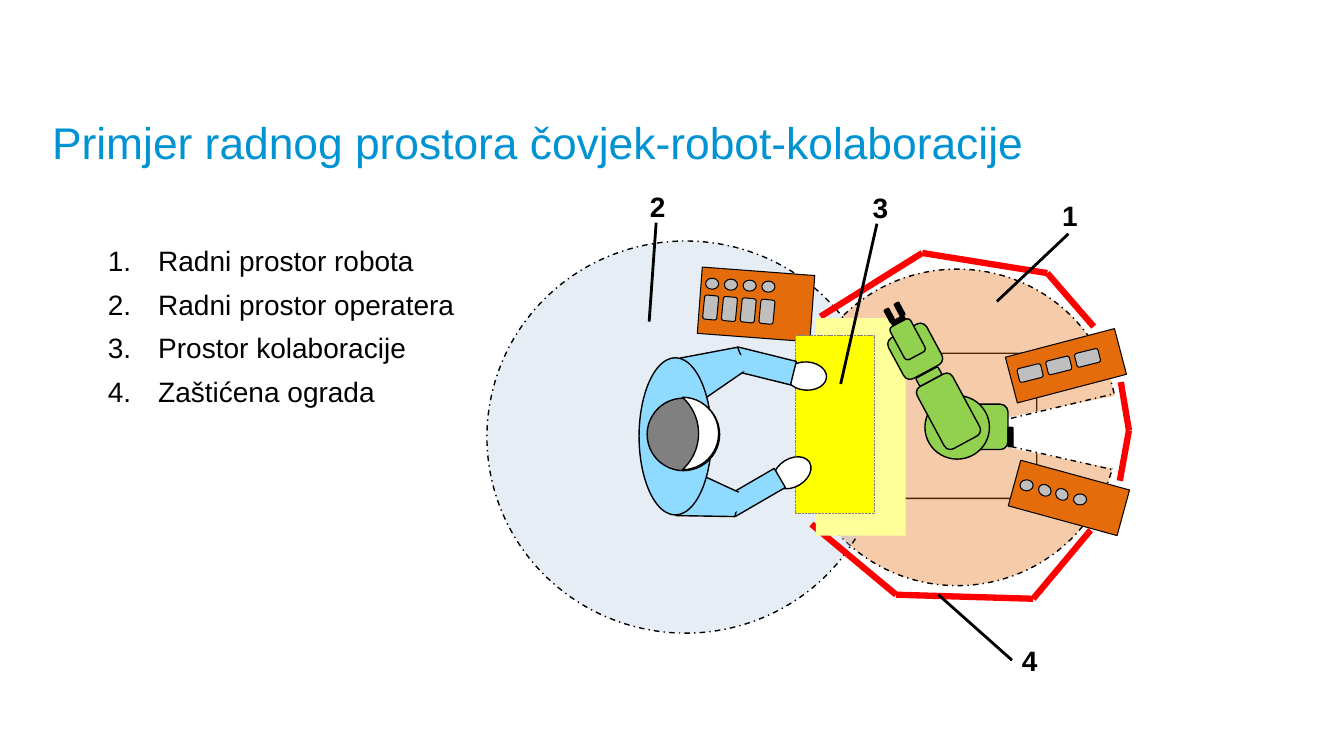
import itertools
from dataclasses import dataclass
from typing import Any, Optional

import lxml.etree
import pptx
import pptx.dml.color
import pptx.enum.dml
import pptx.enum.shapes
import pptx.enum.text
import pptx.oxml.ns
import pptx.util

Pt = pptx.util.Pt
Color = pptx.dml.color.RGBColor
Kind = pptx.enum.shapes.MSO_SHAPE
Dash = pptx.enum.dml.MSO_LINE
Text = pptx.enum.text
qn = pptx.oxml.ns.qn

BLACK = Color(0x00, 0x00, 0x00)
WHITE = Color(0xFF, 0xFF, 0xFF)
TITLE = Color(0x00, 0x93, 0xD3)
RED = Color(0xFF, 0x00, 0x00)
RUST = Color(0xE4, 0x6C, 0x0A)
PALE = Color(0xB9, 0xCD, 0xE5)
SILVER = Color(0xBF, 0xBF, 0xBF)
GRAY = Color(0x80, 0x80, 0x80)
CREAM = Color(0xFF, 0xFF, 0x99)
YELLOW = Color(0xFF, 0xFF, 0x00)
SKY = Color(0x8F, 0xDA, 0xFF)
GREEN = Color(0x92, 0xD0, 0x50)

RECT, ROUND, OVAL = Kind.RECTANGLE, Kind.ROUNDED_RECTANGLE, Kind.OVAL
DISC = Kind.FLOWCHART_CONNECTOR


@dataclass(frozen=True)
class Part:
    kind: Any
    box: tuple[float, float, float, float]
    fill: Color
    turn: float = 0
    edge: Optional[Color] = BLACK
    thick: float = 1
    dash: Any = None
    alpha: Optional[int] = None
    adjust: Optional[float] = None


@dataclass(frozen=True)
class Row:
    kind: Any
    start: tuple[float, float]
    size: tuple[float, float]
    step: tuple[float, float]
    count: int
    turn: float = 0


@dataclass(frozen=True)
class Label:
    text: str
    spot: tuple[float, float]
    tail: tuple[float, float]
    head: tuple[float, float]


KEY, DOT = (17.3, 10.1), (9.4, 7.9)

ZONES = [
    Part(ROUND, (617.8, 233.3, 103.7, 141.8), WHITE, 90, adjust=0.06),
    Part(OVAL, (568.8, 192.2, 229.7, 226.1), RUST, 180, dash=Dash.DASH_DOT, alpha=35),
    Part(Kind.ISOSCELES_TRIANGLE, (712.1, 241.9, 54, 133.9), WHITE, 270, WHITE, 2),
    Part(OVAL, (347.8, 172.1, 283.7, 280.1), PALE, 180, dash=Dash.DASH_DOT, alpha=35),
]
BORDERS = [
    [(722.2, 298.8), (794.9, 281.5)],
    [(722.2, 319), (794.9, 335.5)],
]
PANELS = [
    Part(RECT, (744.5, 221, 33.8, 80.6), RUST, 75.3, thick=0.75),
    Part(RECT, (746.6, 315.4, 33.8, 80.6), RUST, 105.3, thick=0.75),
    Part(RECT, (499.7, 193.7, 80.6, 47.5), RUST, 184.3, thick=0.75),
]
ROWS = [
    Row(ROUND, (727.2, 261.4), KEY, (20.5, -5.4), 3, 346),
    Row(OVAL, (728.6, 342.7), DOT, (38.2, 10.1), 2),
    Row(OVAL, (741.6, 346.3), DOT, (12.2, 2.9), 2, 34.4),
    Row(OVAL, (504, 198.7), DOT, (13.4, 0.7), 4),
    Row(ROUND, (499, 214.6), KEY, (13.4, 1), 4, 275.5),
]
FENCE = [
    [(586.1, 226.1), (658.8, 180.7), (748.1, 195.1), (781.2, 233.3)],
    [(579.6, 374.4), (640.1, 424.8), (738, 427.7), (779, 378.7)],
    [(800.6, 272.9), (806.4, 307.4), (799.9, 343.4)],
]
TABLES = [
    Part(RECT, (537.1, 272.9, 155.5, 64.1), CREAM, 90, None),
    Part(RECT, (532.8, 275, 126.7, 56.2), YELLOW, 90, GRAY, 0.25, Dash.SQUARE_DOT),
]
LABELS = [
    Label("1", (751.7, 138.2), (763.2, 167), (712.1, 215.3)),
    Label("2", (457.2, 131.8), (468.7, 159.1), (463.7, 229.7)),
    Label("3", (616.3, 132.5), (626.4, 159.8), (600.5, 274.3)),
    Label("4", (722.9, 455.8), (722.9, 471.6), (670.3, 424.8)),
]
WORKER = [
    Part(OVAL, (555.8, 323.3, 20.2, 28.8), WHITE, 58.8),
    Part(OVAL, (565.9, 254.2, 20.2, 28.8), WHITE, 93.4),
    Part(RECT, (537.1, 239.8, 17.3, 43.2), SKY, 103.9),
    Part(RECT, (531.4, 331.2, 15.8, 41), SKY, 59.9),
    Part(Kind.TRAPEZOID, (489.6, 335.5, 34.6, 41), SKY, 102.9),
    Part(Kind.TRAPEZOID, (493.9, 243.4, 34.6, 41), SKY, 67.4),
    Part(OVAL, (426.2, 285.8, 112.3, 51.8), SKY, 90),
    Part(DISC, (462.2, 284.4, 51.8, 51.8), GRAY, 90),
    Part(Kind.MOON, (487.4, 283.7, 25.9, 51.8), WHITE, 180, adjust=0.553),
    Part(RECT, (529.2, 249.8, 10.8, 21.6), SKY, 103.9, None),
    Part(RECT, (524.9, 345.6, 10.8, 21.6), SKY, 58.6, None),
]
ROBOT = [
    Part(ROUND, (640.8, 216, 3.6, 10.1), BLACK, 331.9),
    Part(ROUND, (667.4, 288.7, 52.6, 32.4), GREEN),
    Part(DISC, (661, 282.2, 45.4, 46.1), GREEN, 90),
    Part(ROUND, (652.3, 279.4, 50.4, 28.8), GREEN, 61.7),
    Part(ROUND, (637.2, 235.4, 33.1, 31), GREEN, 241.7),
    Part(ROUND, (660.2, 259.9, 6.5, 18), GREEN, 241.7),
    Part(ROUND, (635, 234, 26.6, 16.6), GREEN, 241.7),
    Part(ROUND, (640.1, 223.9, 2.9, 10.1), BLACK, 241.7),
    Part(ROUND, (720, 305.3, 3.6, 13.7), BLACK),
    Part(ROUND, (633.6, 220.3, 3.6, 10.1), BLACK, 331.9),
]
ITEMS = ["Radni prostor robota", "Radni prostor operatera", "Prostor kolaboracije", "Zaštićena ograda"]


def apply(item: Any, values: dict[str, Any]) -> None:
    for name, value in values.items():
        setattr(item, name, value)


def place(item: Any, box: tuple[float, float, float, float]) -> None:
    apply(item, dict(zip(("left", "top", "width", "height"), map(Pt, box))))


def write(para: Any, text: str, size: float, color: Color, bold: bool = False) -> None:
    run = para.add_run()
    run.text = text
    apply(run.font, {"name": "Arial", "size": Pt(size), "bold": bold})
    run.font.color.rgb = color


def draw(shapes: Any, part: Part) -> None:
    shape = shapes.add_shape(part.kind, *map(Pt, part.box))
    shape.rotation = part.turn
    shape.shadow.inherit = False
    shape.fill.solid()
    shape.fill.fore_color.rgb = part.fill
    if part.alpha is not None:
        tint = shape._element.spPr.find(".//" + qn("a:srgbClr"))
        lxml.etree.SubElement(tint, qn("a:alpha"), val=str(part.alpha * 1000))
    if part.adjust is not None:
        shape.adjustments[0] = part.adjust
    if part.edge is None:
        shape.line.fill.background()
    else:
        shape.line.color.rgb = part.edge
        apply(shape.line, {"width": Pt(part.thick), "dash_style": part.dash})


def trace(shapes: Any, points: list[tuple[float, float]], color: Color, thick: float, dash: Any = None) -> None:
    for tail, head in itertools.pairwise(points):
        line = shapes.add_connector(pptx.enum.shapes.MSO_CONNECTOR.STRAIGHT, *map(Pt, tail + head))
        line.line.color.rgb = color
        apply(line.line, {"width": Pt(thick), "dash_style": dash})
        lxml.etree.SubElement(line._element.spPr, qn("a:effectLst"))


def repeat(shapes: Any, row: Row) -> None:
    for i in range(row.count):
        spot = tuple(a + i * d for a, d in zip(row.start, row.step))
        draw(shapes, Part(row.kind, spot + row.size, SILVER, row.turn, thick=0.75))


def mark(shapes: Any, label: Label) -> None:
    box = shapes.add_textbox(*map(Pt, label.spot + (25.9, 31.7)))
    box.text_frame.word_wrap = False
    write(box.text_frame.paragraphs[0], label.text, 20, BLACK, True)
    trace(shapes, [label.tail, label.head], BLACK, 2)


def head(title: Any) -> None:
    place(title, (32.4, 74.9, 913, 67))
    apply(title.text_frame, {
        "auto_size": Text.MSO_AUTO_SIZE.NONE, "word_wrap": True,
        "vertical_anchor": Text.MSO_ANCHOR.TOP,
        "margin_left": Pt(4.8), "margin_top": Pt(7.2),
    })
    para = title.text_frame.paragraphs[0]
    para.alignment = Text.PP_ALIGN.LEFT
    write(para, "Primjer radnog prostora čovjek-robot-kolaboracije", 31.7, TITLE)


def fill(body: Any) -> None:
    place(body, (69.8, 170.6, 285.8, 122.4))
    frame = body.text_frame
    apply(frame, {"auto_size": Text.MSO_AUTO_SIZE.NONE, "word_wrap": True})
    for i, item in enumerate(ITEMS):
        para = frame.add_paragraph() if i else frame.paragraphs[0]
        props = para._p.get_or_add_pPr()
        props.set("marL", str(Pt(36)))
        props.set("indent", str(-Pt(36)))
        lxml.etree.SubElement(props, qn("a:buFont"), typeface="+mj-lt")
        lxml.etree.SubElement(props, qn("a:buAutoNum"), type="arabicPeriod")
        para.space_before = Pt(7 if i else 0)
        write(para, item, 20, BLACK)


def main() -> None:
    deck = pptx.Presentation()
    apply(deck, {"slide_width": Pt(960), "slide_height": Pt(540)})
    slide = deck.slides.add_slide(deck.slide_layouts[1])
    shapes = slide.shapes
    head(shapes.title)
    fill(slide.placeholders[1])
    for part in ZONES:
        draw(shapes, part)
    for points in BORDERS:
        trace(shapes, points, BLACK, 1, Dash.DASH_DOT)
    for part in PANELS:
        draw(shapes, part)
    for row in ROWS:
        repeat(shapes, row)
    for points in FENCE:
        trace(shapes, points, RED, 4.5)
    for part in TABLES:
        draw(shapes, part)
    for label in LABELS:
        mark(shapes, label)
    for part in WORKER + ROBOT:
        draw(shapes, part)
    deck.save("out.pptx")


if __name__ == "__main__":
    main()
